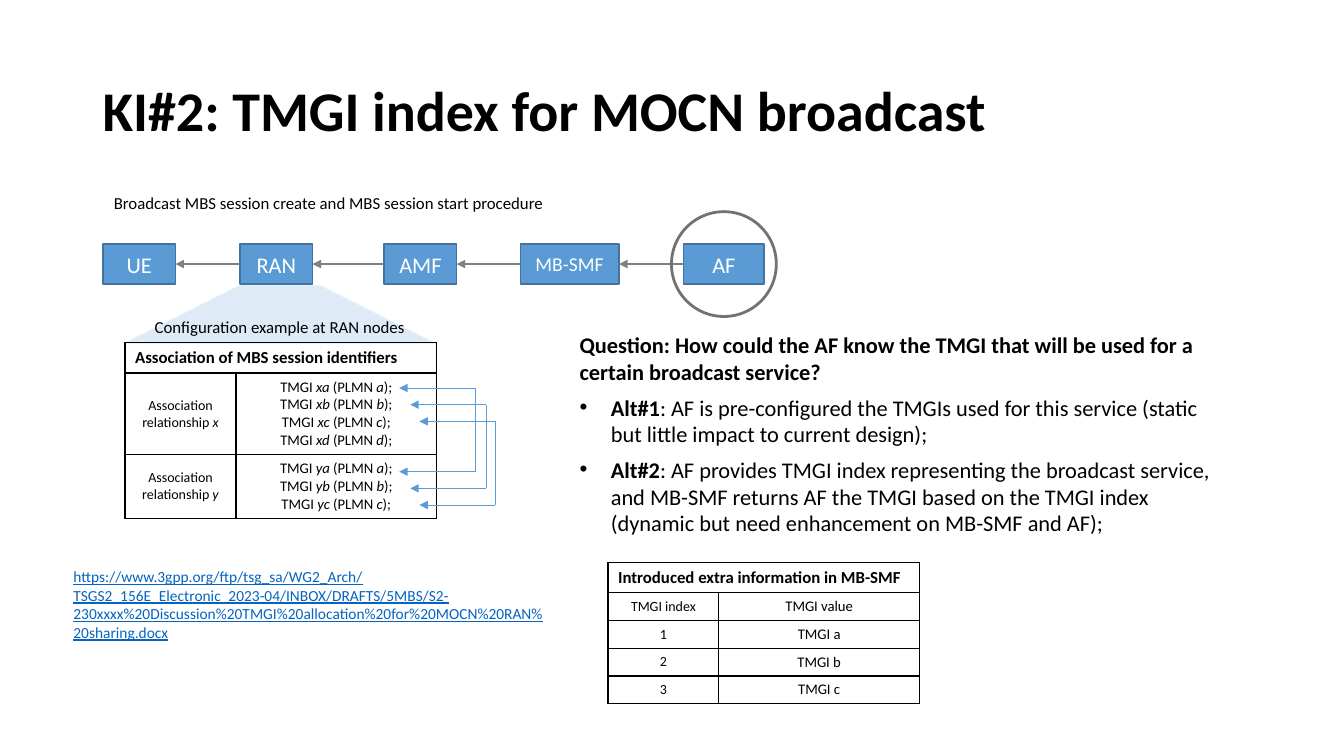
"""Build the slide on the TMGI index for MOCN broadcast."""
from lxml import etree
from pptx import Presentation
from pptx.dml.color import RGBColor
from pptx.enum.shapes import MSO_CONNECTOR, MSO_SHAPE
from pptx.enum.text import MSO_ANCHOR, PP_ALIGN
from pptx.oxml.ns import qn
from pptx.util import Inches, Pt

LEFT, MID = PP_ALIGN.LEFT, PP_ALIGN.CENTER
CENTRE = MSO_ANCHOR.MIDDLE
STRAIGHT = MSO_CONNECTOR.STRAIGHT
RECT, OVAL, TRAP = MSO_SHAPE.RECTANGLE, MSO_SHAPE.OVAL, MSO_SHAPE.TRAPEZOID
COLS, ROWS = 13.33, 7.5
BLACK, WHITE, BLUE, GREY = "000000", "FFFFFF", "5B9BD5", "808080"
FONT = "Calibri"

TITLE = "KI#2: TMGI index for MOCN broadcast"
FLOW = "Broadcast MBS session create and MBS session start procedure"
CONFIG = "Configuration example at RAN nodes"
NODES = [("UE", 1.02, 0.72, 16), ("RAN", 2.38, 0.72, 16), ("AMF", 3.81, 0.72, 16),
         ("MB-SMF", 5.16, 0.98, 14), ("AF", 6.78, 0.8, 16)]
ASSOC = [
    ["Association of MBS session identifiers"],
    ["Association relationship *x*",
     "TMGI *xa* (PLMN *a*);\nTMGI *xb *(PLMN *b*);\nTMGI *xc *(PLMN *c*);\nTMGI *xd *(PLMN *d*);"],
    ["Association relationship* y*",
     "TMGI *ya* (PLMN *a*);\nTMGI *yb *(PLMN *b*);\nTMGI *yc *(PLMN *c*);"],
]
EXTRA = [["Introduced extra information in MB-SMF"], ["TMGI index", "TMGI value"],
         ["1", "TMGI a"], ["2", "TMGI b"], ["3", "TMGI c"]]
QUERY = [
    "*Question: How could the AF know the TMGI that will be used for a certain broadcast service?*",
    "*Alt#1*: AF is pre-configured the TMGIs used for this service "
    "(static but little impact to current design);",
    "*Alt#2*: AF provides TMGI index representing the broadcast service, and MB-SMF returns AF "
    "the TMGI based on the TMGI index (dynamic but need enhancement on MB-SMF and AF);",
]
LINK = ("https://www.3gpp.org/ftp/tsg_sa/WG2_Arch/TSGS2_156E_Electronic_2023-04/INBOX/DRAFTS/5MBS/"
        "S2-230xxxx%20Discussion%20TMGI%20allocation%20for%20MOCN%20RAN%20sharing.docx")


def paint(code):
    return RGBColor.from_string(code)


def grid(*cells):
    return [Inches(cell) for cell in cells]


def write(frame, lines, size, color=BLACK, align=LEFT, bold=False, mark="italic"):
    """Write lines run by run; text between stars gets the marked style."""
    for row, line in enumerate(lines):
        para = frame.add_paragraph() if row else frame.paragraphs[0]
        para.alignment = align
        for turn, part in enumerate(line.split("*")):
            if part:
                run = para.add_run()
                run.text = part
                font = run.font
                font.name, font.size, font.bold = FONT, Pt(size), bold
                font.color.rgb = paint(color)
                if turn % 2:
                    setattr(font, mark, True)


def label(slide, place, lines, size, **style):
    frame = slide.shapes.add_textbox(*grid(*place)).text_frame
    frame.word_wrap = True
    write(frame, lines, size, **style)
    return frame


def block(slide, kind, place, fill=None, edge=None, width=1):
    shape = slide.shapes.add_shape(kind, *grid(*place))
    shape.shadow.inherit = False
    if fill:
        shape.fill.solid()
        shape.fill.fore_color.rgb = paint(fill)
    else:
        shape.fill.background()
    if edge:
        shape.line.color.rgb = paint(edge)
        shape.line.width = Pt(width)
    else:
        shape.line.fill.background()
    return shape


def link(slide, ends, color, width, tip=None):
    line = slide.shapes.add_connector(STRAIGHT, *grid(*ends))
    line.line.color.rgb = paint(color)
    line.line.width = Pt(width)
    props = line._element.spPr
    if tip:
        etree.SubElement(props.find(qn("a:ln")), qn(f"a:{tip}"), type="triangle")
    etree.SubElement(props, qn("a:effectLst"))
    return line


def border(cell):
    props = cell._tc.get_or_add_tcPr()
    for side in "LRTB":
        edge = etree.SubElement(props, qn(f"a:ln{side}"), w=str(Pt(1)))
        fill = etree.SubElement(edge, qn("a:solidFill"))
        etree.SubElement(fill, qn("a:srgbClr"), val=BLACK)


def chart(slide, left, top, rows, heights):
    """Draw a two-column table under a merged heading."""
    widths = (1.1, 1.99)
    table = slide.shapes.add_table(
        len(rows), 2, *grid(left, top, sum(widths), sum(heights))).table
    table.first_row = table.horz_banding = False
    for col, width in zip(table.columns, widths):
        col.width = Inches(width)
    for row, height in zip(table.rows, heights):
        row.height = Inches(height)
    table.cell(0, 0).merge(table.cell(0, 1))
    for y, row in enumerate(rows):
        for x in range(2):
            cell = table.cell(y, x)
            border(cell)
            cell.fill.background()
            cell.vertical_anchor = CENTRE
            if x < len(row):
                size = (10, 10.5)[x] if y else 12
                write(cell.text_frame, row[x].split("\n"), size,
                      align=MID if y else LEFT, bold=not y)


def bullet(para):
    props = para._p.get_or_add_pPr()
    props.set("marL", str(Inches(0.31)))
    props.set("indent", str(-Inches(0.31)))
    para.space_before = Pt(6)
    etree.SubElement(props, qn("a:buFont"), typeface="Arial")
    etree.SubElement(props, qn("a:buChar"), char="•")


def flow(slide):
    top, high = 2.42, 0.4
    boxes = []
    for name, left, wide, size in NODES:
        box = block(slide, RECT, (left, top, wide, high), BLUE, "43739E")
        frame = box.text_frame
        frame.margin_left = frame.margin_right = 0
        frame.vertical_anchor = CENTRE
        write(frame, [name], size, WHITE, MID)
        boxes.append(box)
    for near, far in zip(boxes, boxes[1:]):
        arrow = link(slide, (0, 0, 1, 1), GREY, 2, "tailEnd")
        arrow.begin_connect(far, 1)
        arrow.end_connect(near, 3)


def loops(slide):
    wide, drop, step = 0.75, 0.83, 0.165
    for turn, left in enumerate((3.96, 4.07, 4.16)):
        top, right = 3.85 + turn * step, left + wide
        for y in (top, top + drop):
            link(slide, (left, y, right, y), BLUE, 0.5, "headEnd")
        link(slide, (right, top, right, top + drop), BLUE, 0.5)


def main():
    deck = Presentation()
    deck.slide_width, deck.slide_height = grid(COLS, ROWS)
    slide = deck.slides.add_slide(deck.slide_layouts[6])
    beam = block(slide, TRAP, (1.22, 2.83, 3.11, 0.58), "DEEBF7")
    beam.adjustments[0] = 1.995
    head = label(slide, (0.92, 0.4, 11.5, 1.45), [TITLE], 40, bold=True)
    head.vertical_anchor = CENTRE
    head.paragraphs[0].line_spacing = 0.9
    flow(slide)
    chart(slide, 1.24, 3.4, ASSOC, (0.3, 0.81, 0.63))
    label(slide, (1.38, 3.09, 2.79, 0.3), [CONFIG], 12, align=MID)
    label(slide, (1.02, 1.86, 4.48, 0.3), [FLOW], 12, align=MID)
    query = label(slide, (5.65, 3.24, 6.49, 2.15), QUERY, 16, mark="bold")
    for para in query.paragraphs[1:]:
        bullet(para)
    chart(slide, 6.03, 5.58, EXTRA, [0.3] + [0.275] * 4)
    loops(slide)
    block(slide, OVAL, (6.66, 2.1, 1.04, 1.04), edge="767171", width=2)
    label(slide, (0.63, 5.58, 4.87, 0.84), [f"*{LINK}*"], 11, color="0563C1", mark="underline")
    deck.save("out.pptx")


if __name__ == "__main__":
    main()
